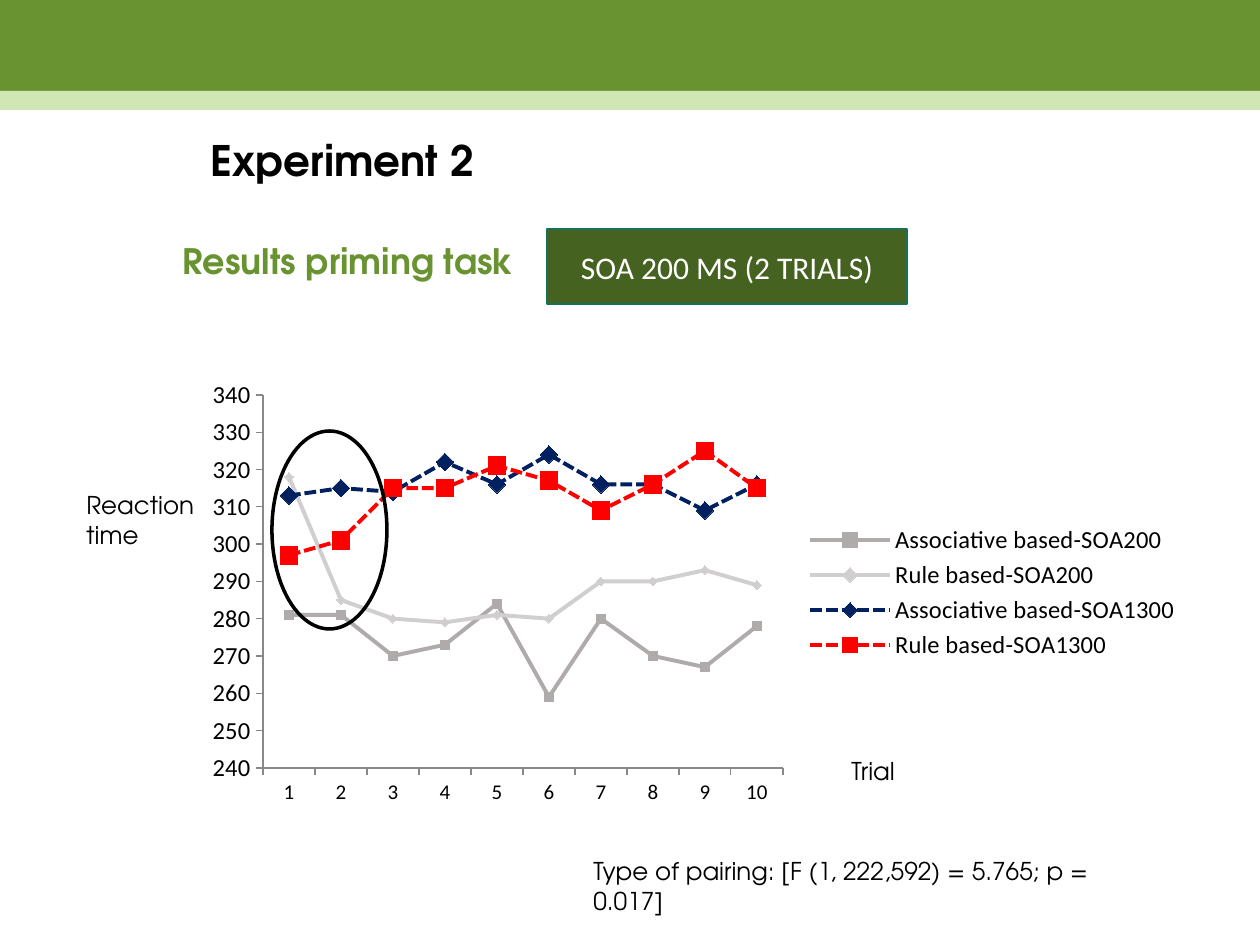
from pptx import Presentation
from pptx.chart.data import CategoryChartData
from pptx.dml.color import RGBColor
from pptx.enum.chart import XL_CHART_TYPE, XL_LEGEND_POSITION, XL_MARKER_STYLE, XL_TICK_MARK
from pptx.enum.dml import MSO_LINE
from pptx.enum.shapes import MSO_SHAPE
from pptx.enum.text import MSO_ANCHOR, PP_ALIGN
from pptx.oxml import parse_xml
from pptx.oxml.ns import nsdecls
from pptx.util import Pt

BLACK = RGBColor(0x00, 0x00, 0x00)
WHITE = RGBColor(0xFF, 0xFF, 0xFF)
GREEN = RGBColor(0x69, 0x93, 0x31)
PALE = RGBColor(0xD1, 0xE6, 0xB5)
DARK = RGBColor(0x46, 0x62, 0x21)
TEAL = RGBColor(0x15, 0x72, 0x59)
GRAY = RGBColor(0xAF, 0xAB, 0xAB)
SILVER = RGBColor(0xD0, 0xCE, 0xCE)
NAVY = RGBColor(0x00, 0x20, 0x60)
RED = RGBColor(0xFF, 0x00, 0x00)
AXIS = RGBColor(0x89, 0x89, 0x89)

HEAD, BODY = "TeX Gyre Adventor", "Calibri"
SQUARE, DIAMOND = XL_MARKER_STYLE.SQUARE, XL_MARKER_STYLE.DIAMOND

# Series: name, values, colour, marker, marker size, dashed
SERIES = [
    ("Associative based-SOA200", (281, 281, 270, 273, 284, 259, 280, 270, 267, 278),
     GRAY, SQUARE, 5, False),
    ("Rule based-SOA200", (318, 285, 280, 279, 281, 280, 290, 290, 293, 289),
     SILVER, DIAMOND, 5, False),
    ("Associative based-SOA1300", (313, 315, 314, 322, 316, 324, 316, 316, 309, 316),
     NAVY, DIAMOND, 10, True),
    ("Rule based-SOA1300", (297, 301, 315, 315, 321, 317, 309, 316, 325, 315),
     RED, SQUARE, 10, True),
]

# Boxes are left, top, width, height in px
CHART = (193, 372, 1000, 441)
PLOT = (263, 395, 520, 373)
BANDS = [((0, 0, 1260, 110), GREEN), ((0, 91, 1260, 19), PALE)]
HEADS = [
    ("Experiment 2", (0, 64, 684, 198), 24, BLACK),
    ("Results priming task", (6, 220, 684, 87), 20, GREEN),
]
NOTES = [
    ("Type of pairing: [F (1, 222,592) = 5.765; p = 0.017]", (581, 850, 593, 43)),
    ("Reaction time", (74, 484, 154, 72)),
    ("Trial", (839, 750, 154, 43)),
]
BADGE = ("SOA 200 MS (2 TRIALS)", (547, 229, 360, 75))
RING = (272, 431, 115, 198)


def emu(*px):
    return [round(n * 914400 / 126) for n in px]


def style(font, name, size, color, bold=False):
    font.name, font.size, font.bold = name, Pt(size), bold
    font.color.rgb = color


def shape(kind, box, fill=None, line=None, width=1):
    item = slide.shapes.add_shape(kind, *emu(*box))
    item.shadow.inherit = False
    if fill is None:
        item.fill.background()
    else:
        item.fill.solid()
        item.fill.fore_color.rgb = fill
    if line is None:
        item.line.fill.background()
    else:
        item.line.color.rgb = line
        item.line.width = Pt(width)
    return item


def label(text, box, size, color, bold=False):
    frame = slide.shapes.add_textbox(*emu(*box)).text_frame
    frame.word_wrap = True
    frame.text = text
    style(frame.paragraphs[0].runs[0].font, HEAD, size, color, bold)
    return frame


deck = Presentation()
deck.slide_width, deck.slide_height = emu(1260, 945)
slide = deck.slides.add_slide(deck.slide_layouts[6])

# Header bands
for box, color in BANDS:
    shape(MSO_SHAPE.RECTANGLE, box, color)

# Chart
data = CategoryChartData()
data.categories = [str(n) for n in range(1, 11)]
for name, vals, *_ in SERIES:
    data.add_series(name, vals)
chart = slide.shapes.add_chart(XL_CHART_TYPE.LINE_MARKERS, *emu(*CHART), data).chart
style(chart.font, BODY, 10, BLACK)
chart.has_title = False
chart.has_legend = True
chart.legend.position = XL_LEGEND_POSITION.RIGHT
chart.legend.include_in_layout = False
style(chart.legend.font, BODY, 14, BLACK)

for axis, size in ((chart.category_axis, 12), (chart.value_axis, 14)):
    axis.has_major_gridlines = False
    axis.major_tick_mark = XL_TICK_MARK.OUTSIDE
    axis.minor_tick_mark = XL_TICK_MARK.NONE
    axis.format.line.color.rgb = AXIS
    style(axis.tick_labels.font, BODY, size, BLACK)
scale = chart.value_axis
scale.minimum_scale, scale.maximum_scale, scale.major_unit = 240, 340, 10

chart.plots[0].vary_by_categories = False
for line, (_, _, color, mark, size, dashed) in zip(chart.plots[0].series, SERIES):
    line.smooth = False
    line.format.line.color.rgb = color
    line.format.line.width = Pt(2.25)
    if dashed:
        line.format.line.dash_style = MSO_LINE.SQUARE_DOT
    line.marker.style, line.marker.size = mark, size
    line.marker.format.fill.solid()
    line.marker.format.fill.fore_color.rgb = color
    line.marker.format.line.color.rgb = color

# Fixed place of the plot inside the chart
parts = {
    "x": (PLOT[0] - CHART[0]) / CHART[2],
    "y": (PLOT[1] - CHART[1]) / CHART[3],
    "w": PLOT[2] / CHART[2],
    "h": PLOT[3] / CHART[3],
}
rows = '<c:layoutTarget val="inner"/><c:xMode val="edge"/><c:yMode val="edge"/>'
rows += "".join(f'<c:{key} val="{val:.3f}"/>' for key, val in parts.items())
area = chart._chartSpace.chart.plotArea
for old in area.findall("{*}layout"):
    area.remove(old)
area.insert(0, parse_xml(
    f'<c:layout {nsdecls("c")}><c:manualLayout>{rows}</c:manualLayout></c:layout>'))

# Ring around the first two trials
shape(MSO_SHAPE.OVAL, RING, line=BLACK, width=2)

# Headings
for text, box, size, color in HEADS:
    frame = label(text, box, size, color, True)
    frame.vertical_anchor = MSO_ANCHOR.MIDDLE
    frame.paragraphs[0].alignment = PP_ALIGN.CENTER
    frame.paragraphs[0].line_spacing = 0.9

# Badge
text, box = BADGE
frame = shape(MSO_SHAPE.RECTANGLE, box, DARK, TEAL).text_frame
frame.text = text
frame.vertical_anchor = MSO_ANCHOR.MIDDLE
frame.paragraphs[0].alignment = PP_ALIGN.CENTER
style(frame.paragraphs[0].runs[0].font, BODY, 18, WHITE)

# Axis names and test result
for text, box in NOTES:
    label(text, box, 14, BLACK)

deck.save("out.pptx")
